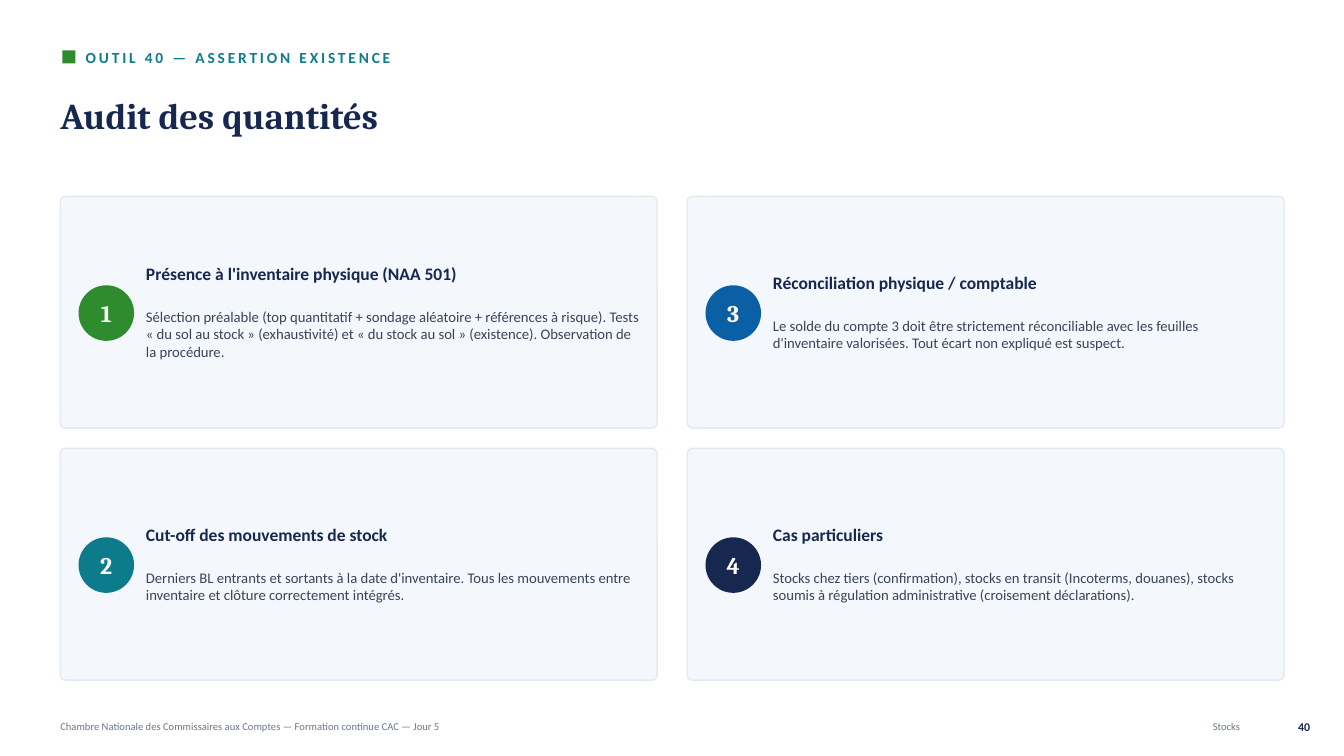
"""Build the slide on auditing stock quantities."""
from pptx import Presentation
from pptx.dml.color import RGBColor
from pptx.enum.shapes import MSO_SHAPE
from pptx.enum.text import MSO_ANCHOR, MSO_AUTO_SIZE, PP_ALIGN
from pptx.util import Cm, Pt

RECT, ROUNDED, OVAL = MSO_SHAPE.RECTANGLE, MSO_SHAPE.ROUNDED_RECTANGLE, MSO_SHAPE.OVAL
LEFT, CENTER, RIGHT = PP_ALIGN.LEFT, PP_ALIGN.CENTER, PP_ALIGN.RIGHT
MIDDLE = MSO_ANCHOR.MIDDLE
NO_AUTOFIT = MSO_AUTO_SIZE.NONE

GREEN = RGBColor(0x2E, 0x8B, 0x2E)
TEAL = RGBColor(0x0C, 0x7C, 0x8C)
BLUE = RGBColor(0x0B, 0x5F, 0xA5)
NAVY = RGBColor(0x16, 0x28, 0x4F)
SLATE = RGBColor(0x3A, 0x44, 0x58)
GREY = RGBColor(0x6B, 0x76, 0x89)
PALE = RGBColor(0xF4, 0xF7, 0xFB)
BORDER = RGBColor(0xE2, 0xE9, 0xF2)
WHITE = RGBColor(0xFF, 0xFF, 0xFF)

CARDS = [
    ("Présence à l'inventaire physique (NAA 501)",
     "Sélection préalable (top quantitatif + sondage aléatoire + références à risque). "
     "Tests « du sol au stock » (exhaustivité) et « du stock au sol » (existence). "
     "Observation de la procédure.", GREEN),
    ("Cut-off des mouvements de stock",
     "Derniers BL entrants et sortants à la date d'inventaire. Tous les mouvements "
     "entre inventaire et clôture correctement intégrés.", TEAL),
    ("Réconciliation physique / comptable",
     "Le solde du compte 3 doit être strictement réconciliable avec les feuilles "
     "d'inventaire valorisées. Tout écart non expliqué est suspect.", BLUE),
    ("Cas particuliers",
     "Stocks chez tiers (confirmation), stocks en transit (Incoterms, douanes), stocks "
     "soumis à régulation administrative (croisement déclarations).", NAVY),
]
FOOTERS = [
    ("Chambre Nationale des Commissaires aux Comptes — Formation continue CAC — Jour 5",
     1.52, 23.37, 7.5, GREY, False, LEFT),
    ("Stocks", 23.88, 7.37, 7.5, GREY, False, RIGHT),
    ("40", 31.75, 1.27, 8.5, NAVY, True, RIGHT),
]


def add_block(kind, x, y, w, h, fill):
    """Add a filled preset shape, or a text box when kind is None."""
    box = (Cm(x), Cm(y), Cm(w), Cm(h))
    if kind is None:
        return s.shapes.add_textbox(*box)
    sp = s.shapes.add_shape(kind, *box)
    sp.shadow.inherit = False
    sp.fill.solid()
    sp.fill.fore_color.rgb = fill
    sp.line.fill.background()
    return sp


def write(sp, lines, align=LEFT):
    """Write one paragraph per (text, font, size, colour, bold) line."""
    tf = sp.text_frame
    tf.word_wrap = True
    tf.auto_size = NO_AUTOFIT
    tf.vertical_anchor = MIDDLE
    tf.margin_left = tf.margin_right = tf.margin_top = tf.margin_bottom = 0
    for i, (text, font, size, color, bold) in enumerate(lines):
        p = tf.add_paragraph() if i else tf.paragraphs[0]
        p.alignment = align
        r = p.add_run()
        r.text = text
        r.font.name = font
        r.font.size = Pt(size)
        r.font.color.rgb = color
        r.font.bold = bold
    return tf.paragraphs


prs = Presentation()
prs.slide_width, prs.slide_height = Cm(33.87), Cm(19.05)
s = prs.slides.add_slide(prs.slide_layouts[5])

title = s.shapes.title
title.left, title.top, title.width, title.height = Cm(1.52), Cm(1.88), Cm(30.73), Cm(2.16)
write(title, [("Audit des quantités", "Cambria", 26, NAVY, True)])[0].line_spacing = 0.95

add_block(RECT, 1.57, 1.27, 0.33, 0.33, GREEN)
kicker = add_block(None, 2.16, 1.07, 29.46, 0.76, None)
p = write(kicker, [("OUTIL 40 — ASSERTION EXISTENCE", "Calibri", 11, TEAL, True)])[0]
p.runs[0].font._element.set("spc", "200")

for i, (heading, body, color) in enumerate(CARDS):
    col, row = divmod(i, 2)
    x, y = 1.52 + 15.8 * col, 4.95 + 6.35 * row
    card = add_block(ROUNDED, x, y, 15.04, 5.84, PALE)
    card.adjustments[0] = 0.022
    card.line.color.rgb = BORDER
    card.line.width = Pt(1)
    badge = add_block(OVAL, x + 0.46, y + 2.24, 1.4, 1.4, color)
    write(badge, [(str(i + 1), "Cambria", 17, WHITE, True)], CENTER)
    content = add_block(None, x + 2.16, y + 0.13, 12.5, 5.59, None)
    paragraphs = write(content, [(heading, "Calibri", 12.5, NAVY, True),
                                 (body, "Calibri", 10.5, SLATE, False)])
    for p in paragraphs:
        p.line_spacing = 0.98
    paragraphs[0].space_after = Pt(17)

for text, x, w, size, color, bold, align in FOOTERS:
    footer = add_block(None, x, 17.93, w, 0.76, None)
    write(footer, [(text, "Calibri", size, color, bold)], align)

prs.save("out.pptx")
